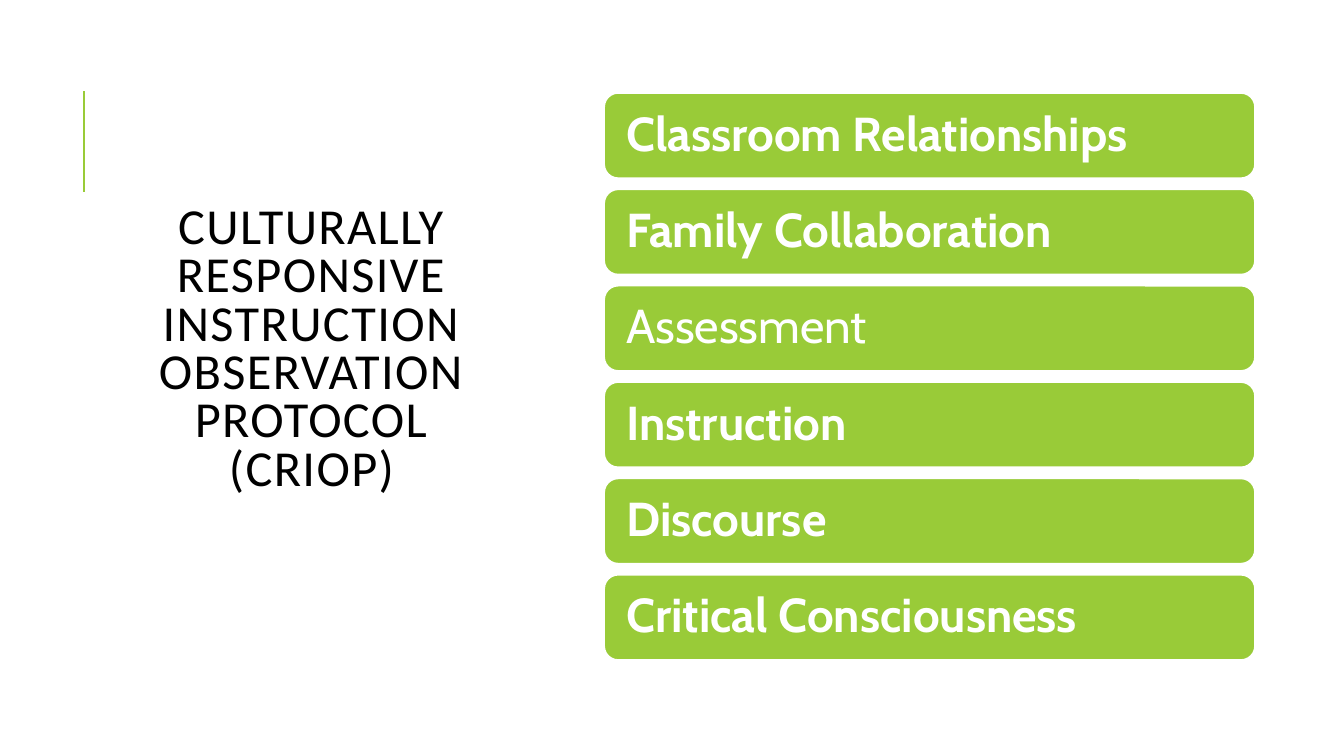
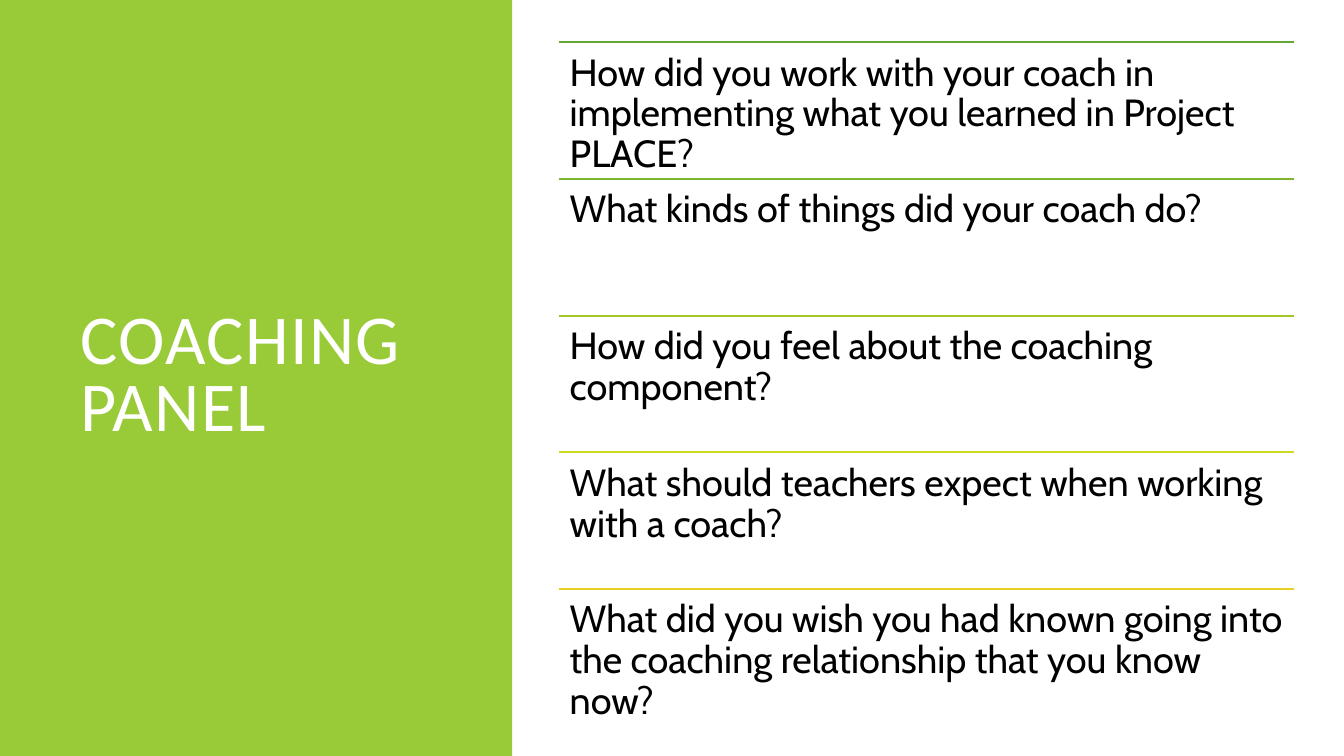
"""Build two slides: the CRIOP elements and the coaching panel questions."""
from lxml import etree
from pptx import Presentation
from pptx.dml.color import RGBColor
from pptx.enum import shapes, text
from pptx.oxml import ns
from pptx.util import Inches, Pt

GREEN = RGBColor(0x99, 0xCB, 0x38)
WHITE = RGBColor(0xFF, 0xFF, 0xFF)
BLACK = RGBColor(0, 0, 0)
TITLE_FONT, BODY_FONT = "Calibri", "Cabin"
SLIDE_WIDTH, SLIDE_HEIGHT = 13.33, 7.5

CRIOP_TITLE = "CULTURALLY RESPONSIVE INSTRUCTION OBSERVATION PROTOCOL (CRIOP)"
ELEMENTS = [
    ("Classroom Relationships", True),
    ("Family Collaboration", True),
    ("Assessment", False),
    ("Instruction", True),
    ("Discourse", True),
    ("Critical Consciousness", True),
]
PANEL_TITLE = "COACHING PANEL"
QUESTIONS = [
    ("How did you work with your coach in implementing what you learned "
     "in Project PLACE?", RGBColor(0x63, 0xA5, 0x37)),
    ("What kinds of things did your coach do?", RGBColor(0x7E, 0xB6, 0x31)),
    ("How did you feel about the coaching component?", RGBColor(0xA2, 0xC8, 0x2B)),
    ("What should teachers expect when working with a coach?",
     RGBColor(0xCF, 0xDB, 0x23)),
    ("What did you wish you had known going into the coaching relationship "
     "that you know now?", RGBColor(0xE6, 0xD0, 0x24)),
]


def write(shape, words, font, size, color, spacing, anchor, insets,
          bold=False, align=text.PP_ALIGN.LEFT):
    frame = shape.text_frame
    frame.text = words
    frame.word_wrap = True
    frame.vertical_anchor = anchor
    frame.margin_left = frame.margin_right = Inches(insets[0])
    frame.margin_top = frame.margin_bottom = Inches(insets[1])
    paragraph = frame.paragraphs[0]
    paragraph.alignment = align
    paragraph.line_spacing = spacing
    run = paragraph.runs[0]
    run.font.name, run.font.size, run.font.bold = font, Pt(size), bold
    run.font.color.rgb = color
    return run


def add_title(slide, words, box, size, color, align=text.PP_ALIGN.LEFT):
    title = slide.shapes.add_textbox(*map(Inches, box))
    run = write(title, words, TITLE_FONT, size, color, 0.8,
                text.MSO_ANCHOR.MIDDLE, (0.1, 0.05), align=align)
    run.font._element.set("spc", "100")


def add_rule(slide, start, end, color, width):
    rule = slide.shapes.add_connector(
        shapes.MSO_CONNECTOR.STRAIGHT, *map(Inches, start + end))
    rule.line.color.rgb = color
    rule.line.width = Pt(width)
    etree.SubElement(rule._element.spPr, ns.qn("a:effectLst"))


def add_block(slide, preset, box):
    block = slide.shapes.add_shape(preset, *map(Inches, box))
    block.shadow.inherit = False
    block.fill.solid()
    block.fill.fore_color.rgb = GREEN
    return block


def build_criop(slide):
    add_rule(slide, (0.83, 1.9), (0.83, 0.9), GREEN, 1.5)
    add_title(slide, CRIOP_TITLE, (1.03, 0.36, 4.12, 6.24), 36, BLACK,
              text.PP_ALIGN.CENTER)
    top, height, gap = 0.92, 0.85, 0.106
    for row, (element, bold) in enumerate(ELEMENTS):
        card = add_block(slide, shapes.MSO_SHAPE.ROUNDED_RECTANGLE,
                         (5.99, top + row * (height + gap), 6.46, height))
        card.line.color.rgb = WHITE
        card.line.width = Pt(1.5)
        write(card, element, BODY_FONT, 34, WHITE, 0.9,
              text.MSO_ANCHOR.MIDDLE, (0.18, 0.1), bold)


def build_panel(slide):
    band = add_block(slide, shapes.MSO_SHAPE.RECTANGLE, (0, 0, 5.08, SLIDE_HEIGHT))
    band.line.fill.background()
    add_title(slide, PANEL_TITLE, (0.7, 0.7, 3.74, 6.09), 50, WHITE)
    left, top, width, height = 5.54, 0.42, 7.29, 1.356
    for row, (question, color) in enumerate(QUESTIONS):
        y = top + row * height
        add_rule(slide, (left, y), (left + width, y), color, 1.25)
        entry = slide.shapes.add_textbox(*map(Inches, (left, y, width, height)))
        write(entry, question, BODY_FONT, 27, BLACK, 0.9,
              text.MSO_ANCHOR.TOP, (0.11, 0.11))


def main():
    deck = Presentation()
    deck.slide_width, deck.slide_height = Inches(SLIDE_WIDTH), Inches(SLIDE_HEIGHT)
    for build in (build_criop, build_panel):
        build(deck.slides.add_slide(deck.slide_layouts[6]))
    deck.save("out.pptx")


if __name__ == "__main__":
    main()
